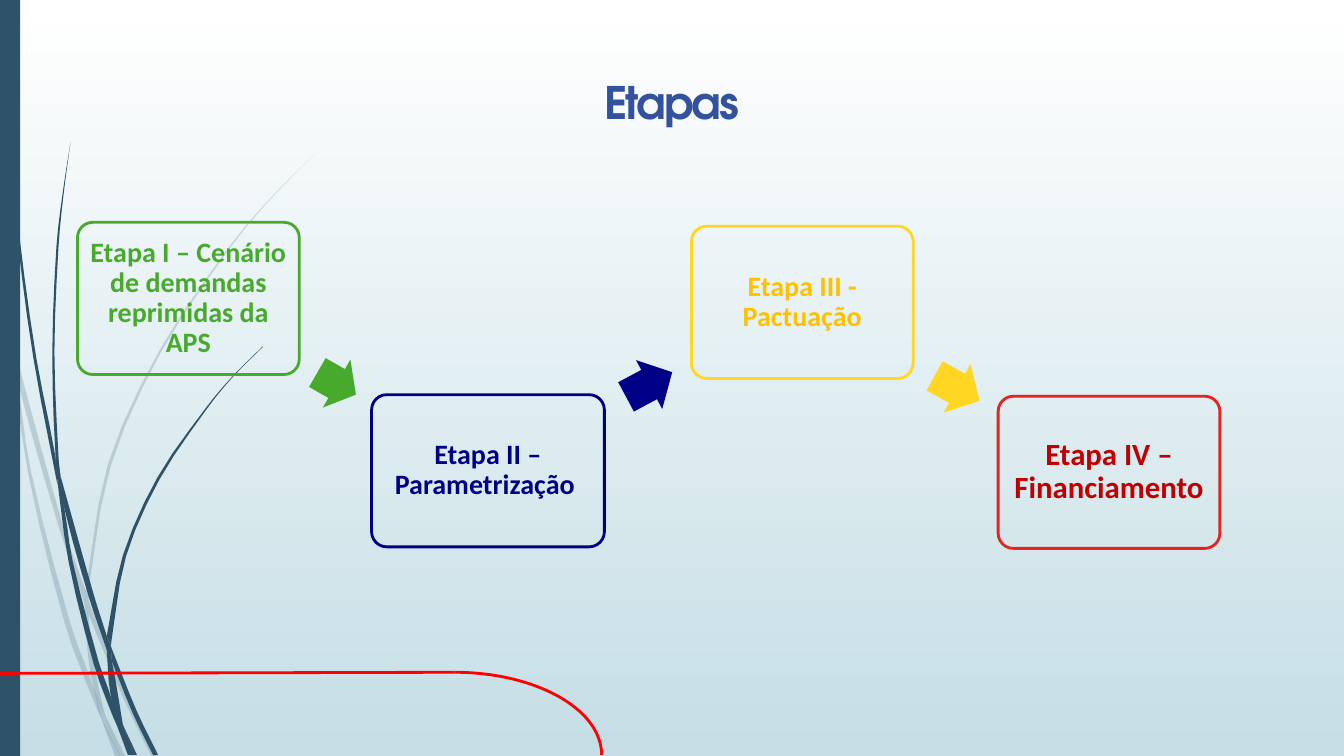
from dataclasses import dataclass
from math import dist

from lxml import etree
from pptx import Presentation
from pptx.dml.color import RGBColor
from pptx.enum import shapes, text
from pptx.oxml import ns
from pptx.util import Pt

SLATE, RED = "2E5369", "FF0000"
GREEN, NAVY, YELLOW = "47AA2D", "000087", "FFD622"

Point = tuple[float, float]


@dataclass(frozen=True)
class Wisp:
    left: list[Point]
    right: list[Point]


@dataclass(frozen=True)
class Stage:
    label: str
    left: float
    top: float
    border: str
    ink: str
    width: float = 158.4
    size: float = 20


@dataclass(frozen=True)
class Arrow:
    left: float
    top: float
    width: float
    rotation: float
    colour: str


FAINT_WISPS = [
    Wisp([(0, 215.3), (7.2, 247.7), (7.9, 252)], [(0, 203), (6.5, 231.8), (7.9, 252)]),
    Wisp([(10.1, 248.4), (12.2, 270.7), (41.8, 375.8), (60.5, 431.3)],
         [(10.1, 248.4), (44.6, 374.4), (61.2, 421.9)]),
    Wisp([(63.4, 439.2), (88.6, 499.7), (108, 540)],
         [(63.4, 429.1), (66.2, 437), (91.4, 498.2), (111.6, 540)]),
    Wisp([(75.6, 511.9), (85.7, 540)], [(75.6, 511.9), (89.3, 540)]),
    Wisp([(7.9, 252), (20.2, 338.4), (46.8, 447.1), (66.2, 499), (72.7, 514.1)],
         [(7.9, 252), (12.2, 270.7), (22.3, 337.7), (50.4, 445.7), (67, 491.8), (72.7, 514.1)]),
    Wisp([(60.5, 431.3), (62.6, 465.1), (67, 491.8), (75.6, 511.9)],
         [(63.4, 439.2), (65.5, 465.1), (74.2, 508.3), (75.6, 511.9)]),
    Wisp([(224.6, 110.2), (193, 141.8), (164.2, 175.7), (113.8, 250.6), (77, 331.9), (61.2, 421.9)],
         [(224.6, 110.2), (193, 142.6), (164.9, 176.4), (115.2, 251.3), (79.2, 332.6),
          (63.4, 420.5), (63.4, 429.1)]),
    Wisp([(72.7, 514.1), (82.1, 540)], [(72.7, 514.1), (85.7, 540)]),
    Wisp([(61.2, 421.9), (60.5, 431.3)], [(63.4, 429.1), (63.4, 439.2)]),
    Wisp([(67, 491.8), (72.7, 514.1), (85.7, 540)], [(67, 491.8), (75.6, 511.9), (85.7, 540)]),
]
SOLID_WISPS = [
    Wisp([(2.2, 0), (5, 79.2), (12.2, 167.8), (23.8, 255.6), (41, 346.3)],
         [(2.9, 0), (5.8, 78.5), (13.7, 167), (25.9, 255.6), (39.6, 326.2), (41, 346.3)]),
    Wisp([(43.2, 339.8), (46.1, 363.6), (63.4, 426.2), (76.3, 464.4)],
         [(43.2, 339.8), (67, 424.8), (76.3, 454.3)]),
    Wisp([(79.9, 472.3), (95, 509.8), (109.4, 539.3)],
         [(79.2, 461.5), (81.4, 467.3), (97.9, 508.3), (113, 539.3)]),
    Wisp([(41, 343.4), (49, 401), (67, 474.5), (79.9, 509.8), (84.2, 519.8)],
         [(41, 343.4), (46.1, 363.6), (51.8, 400.3), (70.6, 473), (79.2, 497.5), (84.2, 519.8)]),
    Wisp([(50.4, 101.5), (44.6, 139), (40.3, 176.4), (37.4, 251.3), (39.6, 323.3), (43.2, 339.8)],
         [(50.4, 101.5), (45.4, 139), (41.8, 176.4), (38.9, 251.3), (41.8, 326.2), (43.2, 339.8)]),
    Wisp([(87.8, 517.7), (95.8, 539.3)], [(87.8, 517.7), (97.9, 539.3)]),
    Wisp([(39.6, 323.3), (41, 343.4), (46.1, 363.6)], [(39.6, 323.3), (43.2, 339.8), (46.1, 363.6)]),
    Wisp([(187.5, 247.7), (166.3, 268.6), (146.9, 291.6), (112.3, 341.3), (87.8, 396.7), (76.3, 454.3)],
         [(187.9, 247.7), (166.3, 269.3), (147.6, 292.3), (113.8, 342.7), (90, 397.4),
          (79.9, 455.8), (79.2, 461.5)]),
    Wisp([(84.2, 519.8), (91.4, 539.3)], [(84.2, 519.8), (94.3, 539.3)]),
    Wisp([(76.3, 464.4), (79.2, 497.5), (87.8, 517.7)],
         [(76.3, 464.4), (79.9, 472.3), (87.8, 517.7)]),
    Wisp([(76.3, 454.3), (76.3, 464.4)], [(79.2, 461.5), (79.9, 472.3)]),
    Wisp([(79.2, 497.5), (84.2, 519.8), (93.6, 539.3)], [(79.2, 497.5), (87.8, 517.7), (95.8, 539.3)]),
]
STAGES = [
    Stage("Etapa I – Cenário de demandas reprimidas da APS", 55.4, 158.8, GREEN, GREEN),
    Stage("Etapa II – Parametrização ", 265.4, 281.9, NAVY, NAVY, width=166.3),
    Stage("Etapa III - Pactuação", 493.9, 161.6, YELLOW, "FFC000"),
    Stage("Etapa IV – Financiamento", 713, 283, "E5231F", "C00000", size=22),
]
ARROWS = [
    Arrow(224.6, 254.2, 31.7, 29.9, GREEN),
    Arrow(445, 254.9, 37.4, 331.8, NAVY),
    Arrow(665.3, 257.6, 36.7, 29, YELLOW),
]


def colour(code: str) -> RGBColor:
    return RGBColor.from_string(code)


def paint(shape, fill: str | None = None, line: str | None = None) -> None:
    """Give a shape a plain fill and outline, with no shadow."""
    shape.shadow.inherit = False
    if fill:
        shape.fill.solid()
        shape.fill.fore_color.rgb = colour(fill)
    else:
        shape.fill.background()
    if line:
        shape.line.color.rgb = colour(line)
        shape.line.width = Pt(2)
    else:
        shape.line.fill.background()


def smooth(knots: list[Point], steps: int = 3) -> list[Point]:
    """Hermite curve through the knots; two knots give a straight edge."""
    if len(knots) == 2:
        return knots
    padded = [knots[0], *knots, knots[-1]]
    curve = [knots[0]]
    for a, b, c, d in zip(padded, padded[1:], padded[2:], padded[3:]):
        span = dist(b, c)
        enter, leave = span / (dist(a, b) + span), span / (span + dist(c, d))
        for t in (step / steps for step in range(1, steps + 1)):
            ease = t * t * (3 - 2 * t)
            x, y = (q + ease * (r - q) + t * (1 - t) ** 2 * enter * (r - p)
                    - t * t * (1 - t) * leave * (s - q) for p, q, r, s in zip(a, b, c, d))
            curve.append((x, y))
    return curve


def draw_wisp(page, wisp: Wisp, opacity: int) -> None:
    outline = [(Pt(x), Pt(y)) for x, y in smooth(wisp.left) + smooth(wisp.right)[::-1]]
    builder = page.shapes.build_freeform(*outline[0], scale=1.0)
    builder.add_line_segments(outline[1:], close=True)
    shape = builder.convert_to_shape()
    paint(shape, SLATE)
    if opacity < 100:
        code = shape._element.spPr.find(".//" + ns.qn("a:srgbClr"))
        etree.SubElement(code, ns.qn("a:alpha")).set("val", str(opacity * 1000))


def write(frame, label: str, size: float, ink: str, font: str):
    """Write one bold, centred paragraph and return its run."""
    frame.word_wrap = True
    para = frame.paragraphs[0]
    para.alignment = text.PP_ALIGN.CENTER
    para.line_spacing = 0.9
    span = para.add_run()
    span.text = label
    span.font.size, span.font.name, span.font.bold = Pt(size), font, True
    span.font.color.rgb = colour(ink)
    return span


def add_preset(page, kind, left: float, top: float, width: float, height: float):
    return page.shapes.add_shape(kind, Pt(left), Pt(top), Pt(width), Pt(height))


def draw_stage(page, stage: Stage) -> None:
    box = add_preset(page, shapes.MSO_SHAPE.ROUNDED_RECTANGLE, stage.left, stage.top, stage.width, 108.7)
    box.adjustments[0] = 0.1
    paint(box, line=stage.border)
    frame = box.text_frame
    frame.margin_left = frame.margin_right = frame.margin_top = frame.margin_bottom = Pt(5)
    frame.vertical_anchor = text.MSO_ANCHOR.MIDDLE
    write(frame, stage.label, stage.size, stage.ink, "Calibri")


def draw_arrow(page, arrow: Arrow) -> None:
    shape = add_preset(page, shapes.MSO_SHAPE.RIGHT_ARROW, arrow.left, arrow.top, arrow.width, 39.6)
    shape.adjustments[0], shape.adjustments[1] = 0.6, 0.5
    shape.rotation = arrow.rotation
    paint(shape, arrow.colour)


def main() -> None:
    deck = Presentation()
    deck.slide_width, deck.slide_height = Pt(960), Pt(540)
    page = deck.slides.add_slide(deck.slide_layouts[5])
    # Background
    backdrop = page.background.fill
    backdrop.gradient()
    backdrop.gradient_angle = 270
    for stop, code in zip(backdrop.gradient_stops, ("FFFFFF", "C5DEE5")):
        stop.color.rgb = colour(code)
    # Decoration on the left
    for wisps, opacity in ((FAINT_WISPS, 20), (SOLID_WISPS, 100)):
        for wisp in wisps:
            draw_wisp(page, wisp, opacity)
    paint(add_preset(page, shapes.MSO_SHAPE.RECTANGLE, 0, 0, 14.4, 540), SLATE)
    # Red line and arc at the bottom
    rule = page.shapes.add_connector(shapes.MSO_CONNECTOR.STRAIGHT, Pt(0), Pt(481), Pt(324.7), Pt(480.2))
    rule.line.color.rgb = colour(RED)
    rule.line.width = Pt(2)
    etree.SubElement(rule._element.spPr, ns.qn("a:effectLst"))
    paint(add_preset(page, shapes.MSO_SHAPE.ARC, 219.6, 480.2, 210.2, 118), line=RED)
    # Stages and the arrows between them
    for stage in STAGES:
        draw_stage(page, stage)
    for arrow in ARROWS:
        draw_arrow(page, arrow)
    # Title
    title = page.shapes.title
    title.left, title.top, title.width, title.height = Pt(44), Pt(54.4), Pt(872), Pt(66)
    title.text_frame.vertical_anchor = text.MSO_ANCHOR.TOP
    span = write(title.text_frame, "Etapas", 32, "33529E", "TeX Gyre Adventor")
    span._r.get_or_add_rPr().set("spc", "-150")
    deck.save("out.pptx")


if __name__ == "__main__":
    main()
